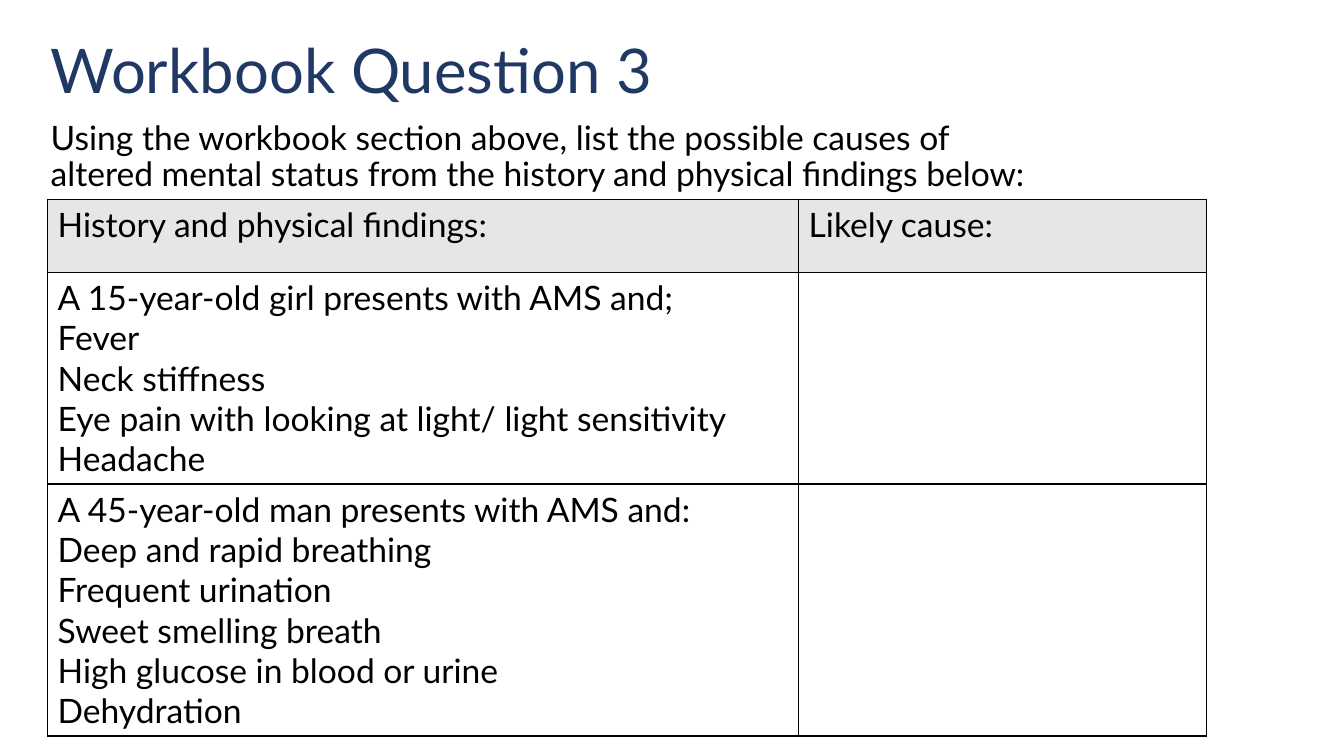
from pptx import Presentation
from pptx import util as u
from pptx.dml.color import RGBColor
from pptx.enum import text as t
from pptx.oxml.ns import qn
from lxml import etree

INK = "000000"
NAVY = "203864"
GREY = "E7E6E6"
WHITE = "FFFFFF"
ROWS = [
    (52, ["History and physical findings:"], ["Likely cause:"]),
    (124.5, ["A 15-year-old girl presents with AMS and;", "Fever", "Neck stiffness",
             "Eye pain with looking at light/ light sensitivity", "Headache"], []),
    (170.5, ["A 45-year-old man presents with AMS and:", "Deep and rapid breathing",
             "Frequent urination", "Sweet smelling breath",
             "High glucose in blood or urine", "Dehydration"], []),
]


def color(code):
    return RGBColor.from_string(code)


def format_all(obj, values):
    for name, value in values.items():
        setattr(obj, name, value)


def style(par, size, code):
    format_all(par.font, {"name": "Lato", "size": u.Pt(size)})
    par.font.color.rgb = color(code)


def place(shape, left, top, width, height):
    format_all(shape, {"left": u.Pt(left), "top": u.Pt(top),
                       "width": u.Pt(width), "height": u.Pt(height)})


def fill_holder(shape, words, box, size, code, anchor):
    place(shape, *box)
    frame = shape.text_frame
    frame.text = words
    format_all(frame, {"word_wrap": True, "auto_size": t.MSO_AUTO_SIZE.NONE,
                       "vertical_anchor": anchor})
    par = frame.paragraphs[0]
    props = par._p.get_or_add_pPr()
    format_all(par, {"alignment": t.PP_ALIGN.LEFT, "line_spacing": 0.9,
                     "space_before": u.Pt(0)})
    props.set("marL", "0")
    props.set("indent", "0")
    etree.SubElement(props, qn("a:buNone"))
    style(par, size, code)


def add_edges(cell):
    props = cell._tc.get_or_add_tcPr()
    for spot, side in enumerate(("lnL", "lnR", "lnT", "lnB")):
        line = etree.Element(qn("a:" + side), w=str(u.Pt(1)))
        solid = etree.SubElement(line, qn("a:solidFill"))
        etree.SubElement(solid, qn("a:srgbClr"), val=INK)
        props.insert(spot, line)


def fill_cell(cell, lines, back):
    cell.fill.solid()
    cell.fill.fore_color.rgb = color(back)
    add_edges(cell)
    cell.text = "\n".join(lines)
    for par in cell.text_frame.paragraphs:
        style(par, 24, INK)


def add_grid(slide, left, top, widths, rows):
    height = sum(row[0] for row in rows)
    frame = slide.shapes.add_table(len(rows), len(widths), u.Pt(left), u.Pt(top),
                                   u.Pt(sum(widths)), u.Pt(height))
    grid = frame.table
    format_all(grid, {"first_row": False, "horz_banding": False})
    for col, width in zip(grid.columns, widths):
        col.width = u.Pt(width)
    for r, (tall, *cells) in enumerate(rows):
        grid.rows[r].height = u.Pt(tall)
        for c, lines in enumerate(cells):
            fill_cell(grid.cell(r, c), lines, WHITE if r else GREY)


def main():
    deck = Presentation()
    format_all(deck, {"slide_width": u.Pt(960), "slide_height": u.Pt(540)})
    slide = deck.slides.add_slide(deck.slide_layouts[1])
    title, body = slide.placeholders
    fill_holder(title, "Workbook Question 3", (29, 0, 828, 104.5),
                44, NAVY, t.MSO_ANCHOR.MIDDLE)
    fill_holder(body, "Using the workbook section above, list the possible causes of "
                "altered mental status from the history and physical findings below:",
                (29, 83, 714, 343), 24, INK, t.MSO_ANCHOR.TOP)
    add_grid(slide, 34, 142.5, (536.5, 291.5), ROWS)
    deck.save("out.pptx")


if __name__ == "__main__":
    main()
